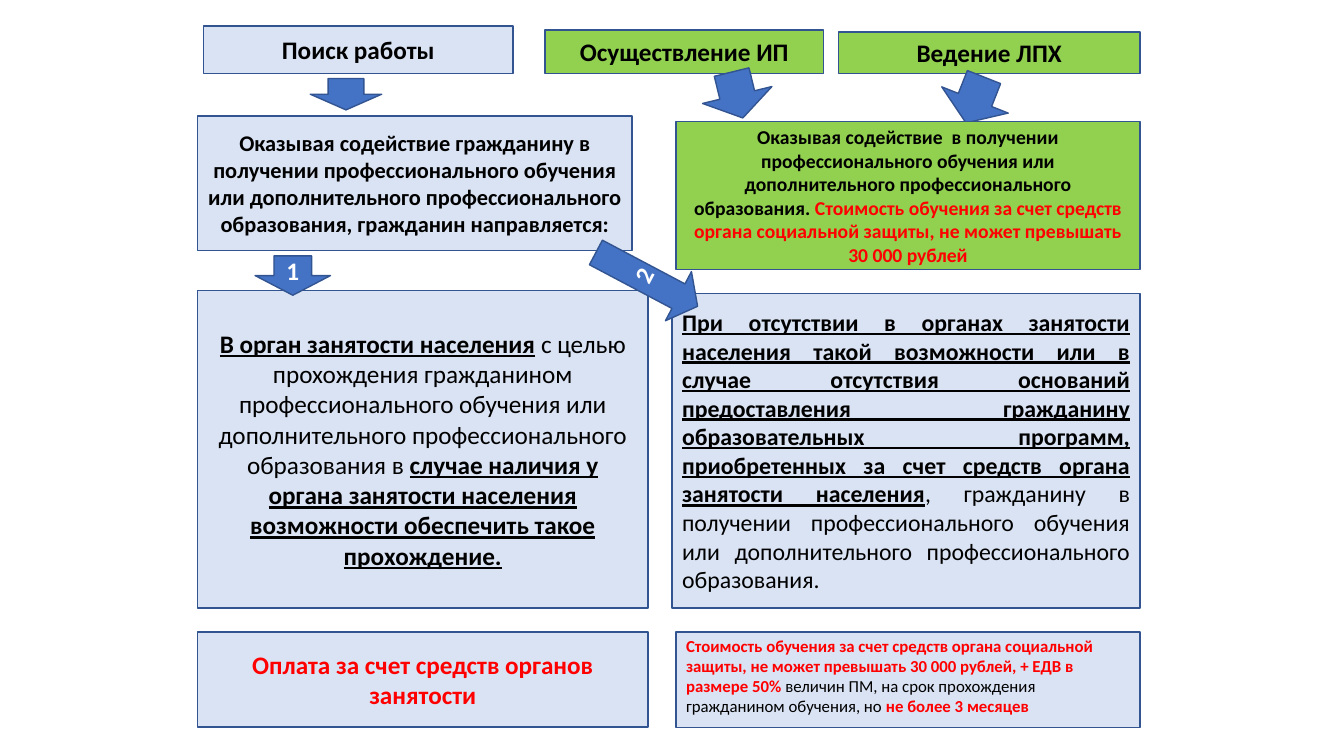
from dataclasses import dataclass

from pptx import Presentation
from pptx.dml.color import RGBColor
from pptx.enum import shapes, text
from pptx.util import Cm, Pt


@dataclass(frozen=True)
class Theme:
    font: str = "Calibri"
    pale: str = "DAE3F3"
    green: str = "92D050"
    blue: str = "4472C4"
    outline: str = "325491"
    black: str = "000000"
    white: str = "FFFFFF"
    red: str = "FF0000"
    heading: int = 18
    reason: int = 17
    lead: int = 16
    support: int = 14
    note: int = 12


THEME = Theme()
SHAPE = shapes.MSO_SHAPE
ALIGN = text.PP_ALIGN

# Shared edges of the columns and rows, in centimetres
LEFT, LEFT_END = 4.98, 16.33
RIGHT, RIGHT_END = 17.04, 28.73
HEADING_END, DETAIL_END, COST_TOP = 1.85, 15.32, 15.93


def bold(words, color=THEME.black, underline=False):
    return words, color, True, underline


def plain(words):
    return words, THEME.black, False, False


def add_shape(page, kind, left, top, width, height, fill):
    shape = page.shapes.add_shape(kind, Cm(left), Cm(top), Cm(width), Cm(height))
    shape.shadow.inherit = False
    shape.fill.solid()
    shape.fill.fore_color.rgb = RGBColor.from_string(fill)
    shape.line.color.rgb = RGBColor.from_string(THEME.outline)
    shape.line.width = Pt(1)
    return shape


def write(shape, spans, size, align=ALIGN.CENTER):
    frame = shape.text_frame
    frame.word_wrap = True
    frame.vertical_anchor = text.MSO_ANCHOR.MIDDLE
    para = frame.paragraphs[0]
    para.alignment = align
    para.font.name = THEME.font
    para.font.size = Pt(size)
    for words, color, is_bold, underline in spans:
        span = para.add_run()
        span.text = words
        span.font.bold = is_bold
        span.font.underline = underline
        span.font.color.rgb = RGBColor.from_string(color)


def add_box(page, left, top, right, bottom, fill, size, spans, align=ALIGN.CENTER):
    box = add_shape(page, SHAPE.RECTANGLE, left, top, right - left, bottom - top, fill)
    write(box, spans, size, align)
    return box


def add_arrow(page, left, top, width, height, turn=0, label=None):
    arrow = add_shape(page, SHAPE.DOWN_ARROW, left, top, width, height, THEME.blue)
    arrow.rotation = turn
    if label:
        write(arrow, [bold(label, THEME.white)], THEME.heading)
    return arrow


def add_headings(page):
    for left, top, right, fill, words in (
        (5.13, 0.66, 12.93, THEME.pale, "Поиск работы"),
        (13.74, 0.76, 20.75, THEME.green, "Осуществление ИП"),
        (21.13, 0.81, RIGHT_END, THEME.green, "Ведение ЛПХ"),
    ):
        add_box(page, left, top, right, HEADING_END, fill, THEME.heading, [bold(words)])
    add_arrow(page, 7.82, 1.98, 1.8, 0.79)
    add_arrow(page, 17.68, 1.8, 1.8, 1.19, 346.3)
    add_arrow(page, 23.67, 1.9, 1.8, 1.24, 21.5)


def add_support(page):
    add_box(page, LEFT, 2.92, 15.93, 6.32, THEME.pale, THEME.lead, [
        bold("Оказывая содействие гражданину в получении профессионального обучения "
             "или дополнительного профессионального образования, гражданин направляется:"),
    ])
    add_box(page, RIGHT, 3.07, RIGHT_END, 6.8, THEME.green, THEME.support, [
        bold("Оказывая содействие  в получении профессионального обучения или "
             "дополнительного профессионального образования."),
        bold(" Стоимость обучения за счет средств органа социальной защиты, "
             "не может превышать 30 000 рублей", THEME.red),
    ])


def add_directions(page):
    add_box(page, LEFT, 7.32, LEFT_END, DETAIL_END, THEME.pale, THEME.heading, [
        bold("В орган занятости населения", underline=True),
        plain(" с целью прохождения гражданином профессионального обучения или "
              "дополнительного профессионального образования в "),
        bold("случае наличия у органа занятости населения возможности "
             "обеспечить такое прохождение.", underline=True),
    ])
    add_box(page, 16.94, 7.39, RIGHT_END, DETAIL_END, THEME.pale, THEME.reason, [
        bold("При отсутствии в органах занятости населения такой возможности или "
             "в случае отсутствия оснований предоставления гражданину "
             "образовательных программ, приобретенных за счет средств органа "
             "занятости населения", underline=True),
        plain(", гражданину в получении профессионального обучения или "
              "дополнительного профессионального образования."),
    ], ALIGN.JUSTIFY)
    add_arrow(page, 6.43, 6.45, 1.9, 0.99, label="1")
    slanted = add_arrow(page, 15.6, 5.59, 1.4, 2.9, 297.9, "2")
    slanted.adjustments[1] = 0.39


def add_costs(page):
    add_box(page, LEFT, COST_TOP, LEFT_END, 18.32, THEME.pale, THEME.heading, [
        bold("Оплата за счет средств органов занятости", THEME.red),
    ])
    note = add_box(page, RIGHT, COST_TOP, RIGHT_END, 18.34, THEME.pale, THEME.note, [
        bold("Стоимость обучения за счет средств органа социальной защиты, не может "
             "превышать 30 000 рублей, + ЕДВ в размере 50% ", THEME.red),
        plain("величин ПМ, на срок прохождения гражданином обучения, но "),
        bold("не более 3 месяцев", THEME.red),
    ], ALIGN.LEFT)
    note.text_frame.vertical_anchor = text.MSO_ANCHOR.TOP
    note.text_frame.margin_top = Cm(0.08)


def main():
    deck = Presentation()
    deck.slide_width, deck.slide_height = Cm(33.87), Cm(19.05)
    page = deck.slides.add_slide(deck.slide_layouts[6])
    add_headings(page)
    add_support(page)
    add_directions(page)
    add_costs(page)
    deck.save("out.pptx")


if __name__ == "__main__":
    main()
